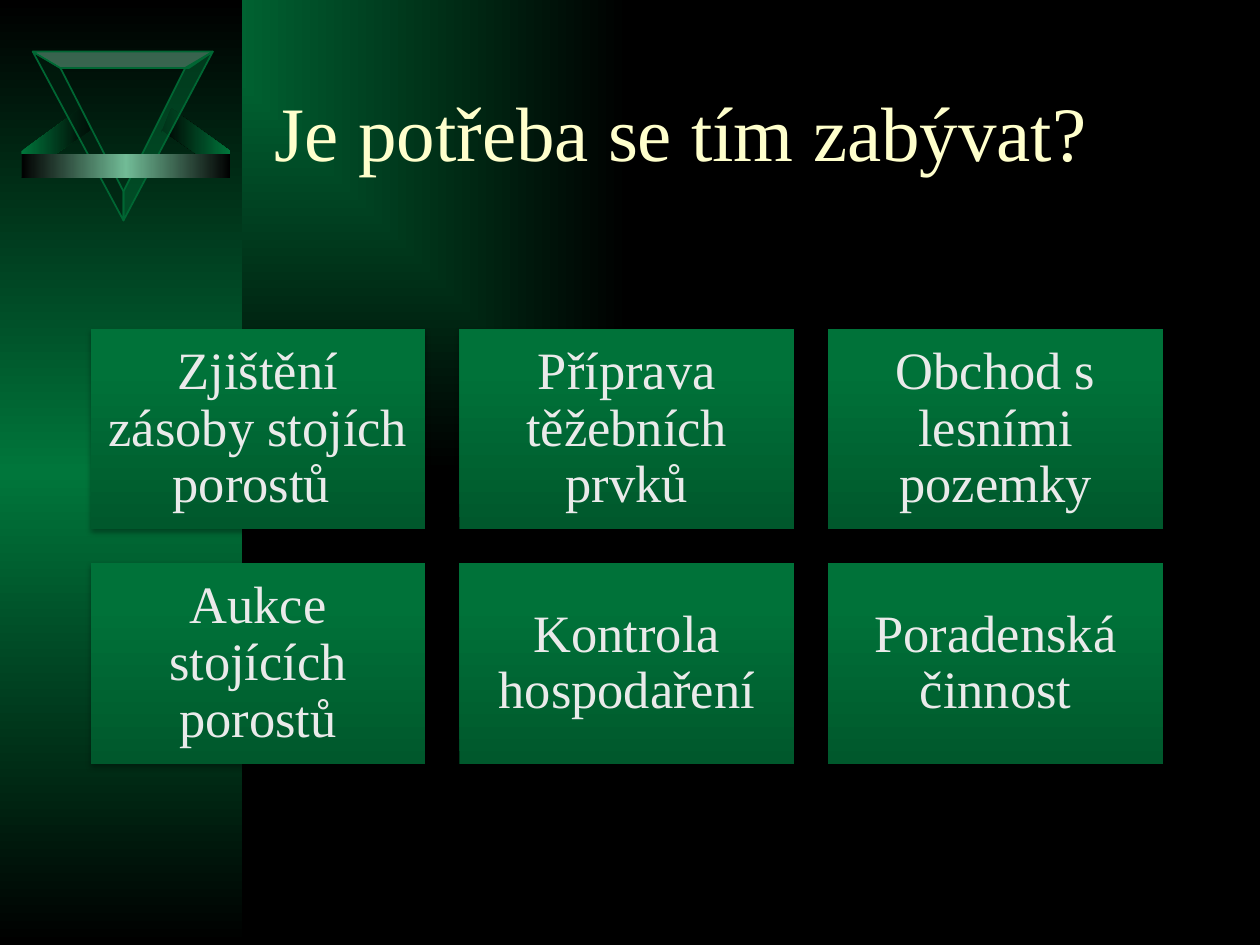
from dataclasses import dataclass

from lxml import etree
from pptx import Presentation
from pptx.dml.color import RGBColor
from pptx.enum.shapes import MSO_SHAPE
from pptx.enum.text import MSO_ANCHOR, MSO_AUTO_SIZE, PP_ALIGN
from pptx.oxml import parse_xml
from pptx.oxml.ns import nsdecls, qn
from pptx.util import Inches, Pt

RECTANGLE = MSO_SHAPE.RECTANGLE
MIDDLE = MSO_ANCHOR.MIDDLE
NO_AUTOFIT = MSO_AUTO_SIZE.NONE
LEFT, CENTER = PP_ALIGN.LEFT, PP_ALIGN.CENTER


@dataclass(frozen=True)
class Theme:
    font: str = "Times New Roman"
    title_size: int = 44
    tile_size: int = 30
    title: str = "FFFFCC"
    tile_text: str = "EAEAEA"
    black: str = "000000"
    green: str = "00763B"
    outline: str = "006633"
    dark: str = "002010"
    light: str = "71BB96"
    tile_stops: tuple = ((0, "00582C"), (80, "007239"), (100, "007339"))


THEME = Theme()
SERVICES = [
    ["Zjištění zásoby stojích porostů ", "Příprava těžebních prvků", "Obchod s lesními pozemky"],
    ["Aukce stojících porostů", "Kontrola hospodaření", "Poradenská činnost"],
]


def replace_with_gradient(properties, stops, angle=None):
    """Swap the solid fill for a gradient, spreading from the top left without an angle."""
    colors = "".join(
        f'<a:gs pos="{position * 1000}"><a:srgbClr val="{color}"/></a:gs>'
        for position, color in stops
    )
    if angle is None:
        direction = '<a:path path="rect"><a:fillToRect r="100000" b="100000"/></a:path>'
    else:
        direction = f'<a:lin ang="{angle * 60000}" scaled="0"/>'
    gradient = parse_xml(
        f'<a:gradFill {nsdecls("a")} rotWithShape="1"><a:gsLst>{colors}</a:gsLst>{direction}</a:gradFill>'
    )
    properties.replace(properties.find(qn("a:solidFill")), gradient)


def fill_gradient(shape, stops, angle):
    shape.shadow.inherit = False
    shape.line.fill.background()
    shape.fill.solid()
    replace_with_gradient(shape._element.spPr, stops, angle)


def add_gradient_box(slide, box, stops, angle):
    shape = slide.shapes.add_shape(RECTANGLE, *map(Inches, box))
    fill_gradient(shape, stops, angle)
    return shape


def add_outline_shape(slide, left, top, points):
    corners = [(Inches(left + x), Inches(top + y)) for x, y in points]
    builder = slide.shapes.build_freeform(*corners[0])
    builder.add_line_segments(corners[1:], close=True)
    shape = builder.convert_to_shape()
    shape.shadow.inherit = False
    return shape


def paint_background(slide):
    slide.background.fill.solid()
    properties = slide._element.find(".//" + qn("p:bgPr"))
    replace_with_gradient(properties, [(0, THEME.green), (100, THEME.black)])


def add_emblem(slide, left, top, width):
    wing = [(0, 0.79), (0, 1), (0.55, 0.62), (0.55, 0.64), (0.47, 0.45)]
    mirrored_wing = [(width - x, y) for x, y in wing]
    fade = [THEME.black, THEME.green]
    for points, colors in ((mirrored_wing, fade), (wing, fade[::-1])):
        fill_gradient(add_outline_shape(slide, left, top, points), list(zip((0, 100), colors)), 0)

    tip = [(0.81, 1.34), (0.81, 1.11)]
    triangle_sides = [
        (tip + [(0.31, 0.13), (0.09, 0)], THEME.dark),
        ([(0.09, 0), (0.31, 0.13), (1.33, 0.13), (1.52, 0)], THEME.light),
        (tip + [(1.3, 0.13), (1.52, 0)], THEME.outline),
    ]
    for points, color in triangle_sides:
        side = add_outline_shape(slide, left, top, points)
        side.fill.solid()
        side.fill.fore_color.rgb = RGBColor.from_string(color)
        color_element = side._element.spPr.find(qn("a:solidFill"))[0]
        etree.SubElement(color_element, qn("a:alpha"), val="50000")
        side.line.color.rgb = RGBColor.from_string(THEME.outline)
        side.line.width = Pt(1)

    bar_stops = [(0, THEME.black), (50, THEME.light), (100, THEME.black)]
    add_gradient_box(slide, (left, top + 0.81, width, 0.19), bar_stops, 0)


def format_text(frame, text, size, color, alignment):
    frame.text = text
    frame.word_wrap = True
    frame.auto_size = NO_AUTOFIT
    frame.vertical_anchor = MIDDLE
    paragraph = frame.paragraphs[0]
    paragraph.alignment = alignment
    paragraph.font.name = THEME.font
    paragraph.font.size = Pt(size)
    paragraph.font.color.rgb = RGBColor.from_string(color)
    return paragraph


def set_title(slide, text, box):
    title = slide.shapes.title
    title.left, title.top, title.width, title.height = map(Inches, box)
    format_text(title.text_frame, text, THEME.title_size, THEME.title, LEFT)


def add_tile(slide, text, box):
    tile = add_gradient_box(slide, box, THEME.tile_stops, 270)
    shadow = etree.SubElement(
        tile._element.spPr.find(qn("a:effectLst")), qn("a:outerShdw"),
        blurRad=str(Pt(3.1)), dist=str(Pt(1.8)), dir="5400000", rotWithShape="0",
    )
    shadow_color = etree.SubElement(shadow, qn("a:srgbClr"), val=THEME.black)
    etree.SubElement(shadow_color, qn("a:alpha"), val="35000")
    frame = tile.text_frame
    frame.margin_left = frame.margin_right = Inches(0.12)
    frame.margin_top = frame.margin_bottom = Inches(0.12)
    paragraph = format_text(frame, text, THEME.tile_size, THEME.tile_text, CENTER)
    paragraph.line_spacing = 0.9


def add_service_grid(slide, services, left, top, width, height, gap=0.27):
    columns, rows = len(services[0]), len(services)
    tile_width = (width - gap * (columns - 1)) / columns
    tile_height = (height - gap * (rows - 1)) / rows
    for row, texts in enumerate(services):
        for column, text in enumerate(texts):
            x = left + column * (tile_width + gap)
            y = top + row * (tile_height + gap)
            add_tile(slide, text, (x, y, tile_width, tile_height))


def main():
    presentation = Presentation()
    presentation.slide_width, presentation.slide_height = Inches(10), Inches(7.5)
    slide = presentation.slides.add_slide(presentation.slide_layouts[5])
    paint_background(slide)
    sidebar_stops = [(0, THEME.black), (50, THEME.green), (100, THEME.black)]
    add_gradient_box(slide, (0, 0, 1.92, 7.5), sidebar_stops, 90)
    add_emblem(slide, 0.17, 0.41, 1.66)
    set_title(slide, "Je potřeba se tím zabývat?", (2.08, 0.25, 7.75, 1.58))
    add_service_grid(slide, SERVICES, 0.72, 2.61, 8.51, 3.45)
    presentation.save("out.pptx")


if __name__ == "__main__":
    main()
